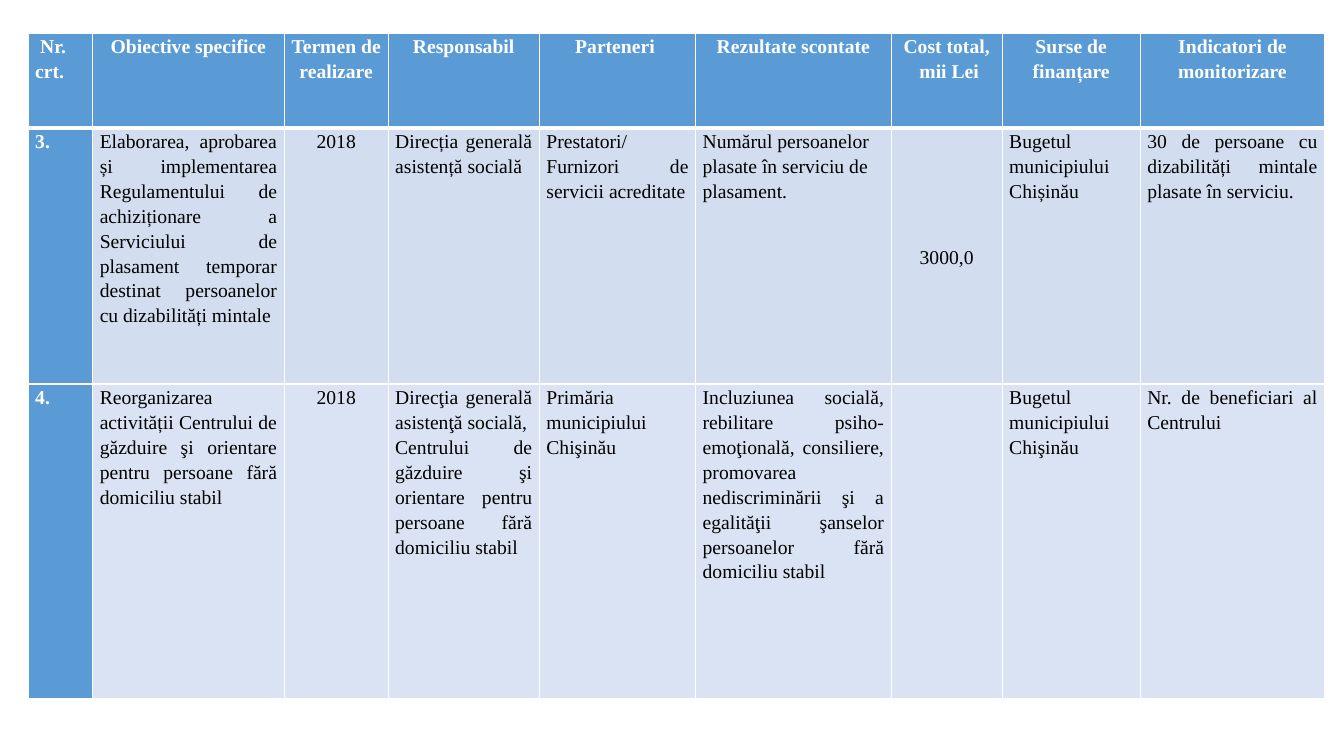
"""Builds the action plan slide: objectives 3 and 4 with their deadlines, costs and indicators."""
from lxml import etree
from pptx import Presentation
from pptx.dml.color import RGBColor
from pptx.enum import text as t
from pptx.oxml import ns
from pptx.util import Inches, Pt

COLORS = {"head": "5B9BD5", "objective3": "D2DEEF", "objective4": "DAE3F3",
          "light": "FFFFFF", "dark": "000000"}
FONT = "Times New Roman"
ALIGN = {"l": t.PP_ALIGN.LEFT, "c": t.PP_ALIGN.CENTER, "j": t.PP_ALIGN.JUSTIFY}

LEFT = 0.28
COLUMN_WIDTHS = [0.64, 1.9, 1.03, 1.5, 1.55, 1.94, 1.1, 1.37, 1.83]
COST_COLUMN = 6

HEADINGS = {
    "height": 0.94, "fill": "head", "align": "lcccccccc", "top_line": 1, "bottom_line": 3,
    "cells": [" Nr.\ncrt.", "Obiective specifice", "Termen de realizare", "Responsabil",
              "Parteneri ", "Rezultate scontate", "Cost total,\n mii Lei",
              "Surse de finanțare", "Indicatori de monitorizare"],
}
OBJECTIVE_3 = {
    "height": 2.54, "fill": "objective3", "align": "ljcjjlclj", "top_line": 3, "bottom_line": 1,
    "cells": [
        "3.",
        "Elaborarea, aprobarea și implementarea Regulamentului de achiziționare a Serviciului "
        "de plasament  temporar destinat persoanelor cu dizabilități mintale",
        "2018",
        "Direcția generală asistență socială",
        "Prestatori/\nFurnizori de servicii acreditate",
        "Numărul persoanelor plasate în serviciu de plasament.",
        " 3000,0 ",
        "Bugetul municipiului Chișinău",
        "30 de persoane cu dizabilități mintale plasate în serviciu.",
    ],
}
OBJECTIVE_4 = {
    "height": 3.13, "fill": "objective4", "align": "ljcjjjcjj", "top_line": 1, "bottom_line": 3,
    "cells": [
        "4.",
        "Reorganizarea activității Centrului de găzduire şi orientare pentru persoane fără "
        "domiciliu stabil  ",
        "2018",
        "Direcţia generală asistenţă socială,\n"
        "Centrului de găzduire şi orientare pentru persoane fără domiciliu stabil",
        "Primăria municipiului Chişinău",
        "Incluziunea socială, rebilitare psiho-emoţională, consiliere, promovarea "
        "nediscriminării şi a egalităţii şanselor persoanelor fără domiciliu stabil",
        "",
        "Bugetul municipiului Chişinău",
        "Nr. de beneficiari al Centrului",
    ],
}
PLAN_TABLES = [(0.33, [HEADINGS, OBJECTIVE_3]), (3.81, [OBJECTIVE_4])]


def write(frame, content, *, align, color, bold, size=14, spacing=1.15):
    """Put each line of content in its own formatted paragraph."""
    frame.text = content
    for paragraph in frame.paragraphs:
        paragraph.alignment = ALIGN[align]
        paragraph.line_spacing = spacing
        paragraph.font.size = Pt(size)
        for run in paragraph.runs:
            run.font.name = FONT
            run.font.size = Pt(size)
            run.font.bold = bold
            run.font.color.rgb = RGBColor.from_string(COLORS[color])


def draw_borders(cell, top, bottom):
    """Give the cell white edges of the stated widths in points."""
    properties = cell._tc.get_or_add_tcPr()
    for side, width in (("L", 1), ("R", 1), ("T", top), ("B", bottom)):
        line = etree.SubElement(properties, ns.qn(f"a:ln{side}"), w=str(Pt(width)))
        fill = etree.SubElement(line, ns.qn("a:solidFill"))
        etree.SubElement(fill, ns.qn("a:srgbClr"), val=COLORS["light"])


def fill_row(table, row_index, entry):
    """Write one plan entry into a table row."""
    table.rows[row_index].height = Inches(entry["height"])
    for column, (content, align) in enumerate(zip(entry["cells"], entry["align"])):
        cell = table.cell(row_index, column)
        heading = column == 0 or entry is HEADINGS
        cell.margin_left = cell.margin_right = Inches(0.07)
        cell.margin_top = cell.margin_bottom = 0
        centred = column == COST_COLUMN and entry is OBJECTIVE_3
        cell.vertical_anchor = t.MSO_ANCHOR.MIDDLE if centred else t.MSO_ANCHOR.TOP
        draw_borders(cell, entry["top_line"], entry["bottom_line"])
        cell.fill.solid()
        cell.fill.fore_color.rgb = RGBColor.from_string(COLORS["head" if heading else entry["fill"]])
        write(cell.text_frame, content, align=align, bold=heading,
              color="light" if heading else "dark")


def main():
    """Build and save the slide."""
    deck = Presentation()
    deck.slide_width, deck.slide_height = Inches(13.33), Inches(7.5)
    slide = deck.slides.add_slide(deck.slide_layouts[6])
    for top, entries in PLAN_TABLES:
        height = sum(entry["height"] for entry in entries)
        plan = slide.shapes.add_table(len(entries), len(COLUMN_WIDTHS), Inches(LEFT), Inches(top),
                                      Inches(sum(COLUMN_WIDTHS)), Inches(height)).table
        plan.first_row = HEADINGS in entries
        plan.horz_banding = False
        for column, width in zip(plan.columns, COLUMN_WIDTHS):
            column.width = Inches(width)
        for row_index, entry in enumerate(entries):
            fill_row(plan, row_index, entry)
    deck.save("out.pptx")


if __name__ == "__main__":
    main()
